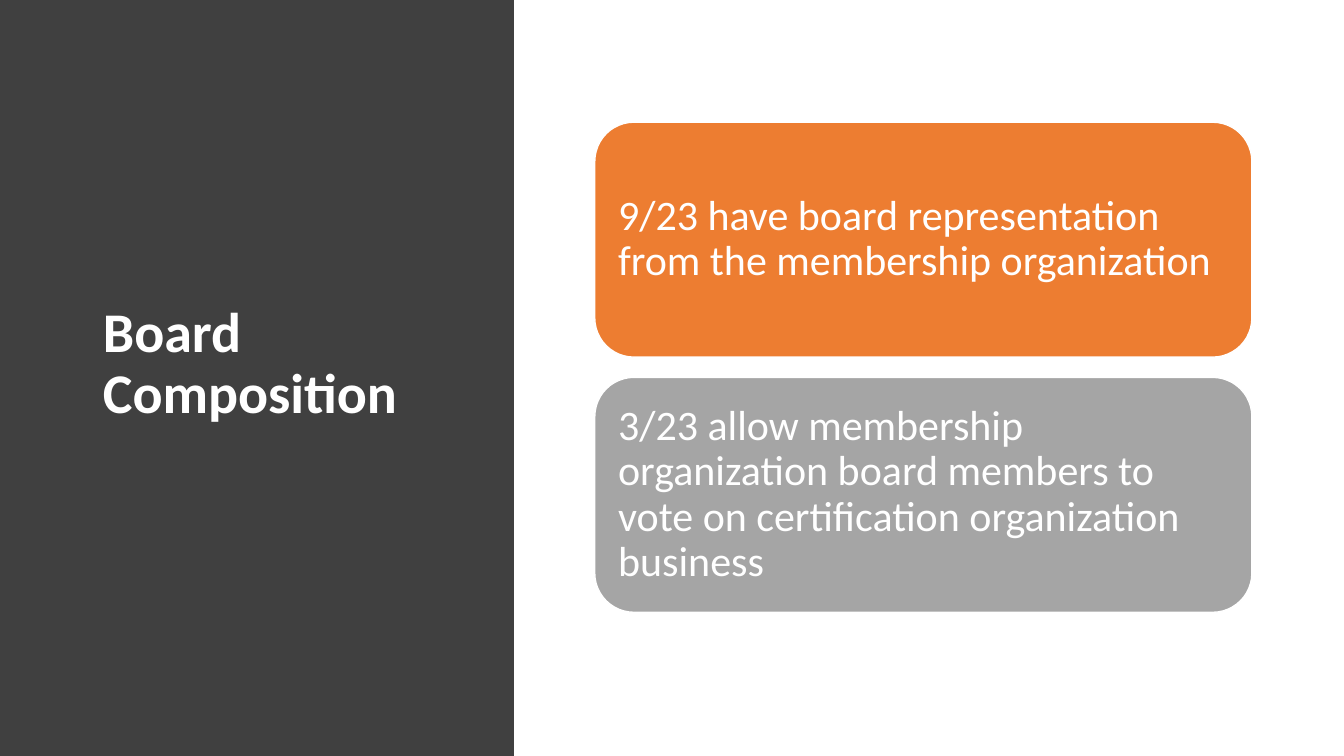
from pptx import Presentation
from pptx.dml.color import RGBColor
from pptx.enum.shapes import MSO_SHAPE
from pptx.enum.text import MSO_ANCHOR, MSO_AUTO_SIZE, PP_ALIGN
from pptx.util import Cm, Pt

COLORS = {
    "panel": "404040",
    "orange": "ED7D31",
    "gray": "A5A5A5",
    "white": "FFFFFF",
}
FONT = "Calibri"
SLIDE_WIDTH, SLIDE_HEIGHT = 33.87, 19.05
CARD_LEFT, CARD_TOP = 14.99, 3.08
CARD_WIDTH, CARD_HEIGHT, CARD_STEP = 16.56, 5.92, 6.43
CARD_INSET = 0.3
CARDS = [
    ("9/23 have board representation from the membership organization", "orange"),
    ("3/23 allow membership organization board members to vote on "
     "certification organization business", "gray"),
]


def color(name):
    return RGBColor.from_string(COLORS[name])


def write_text(shape, text, size, bold=False):
    frame = shape.text_frame
    frame.word_wrap = True
    frame.auto_size = MSO_AUTO_SIZE.NONE
    frame.vertical_anchor = MSO_ANCHOR.MIDDLE
    paragraph = frame.paragraphs[0]
    paragraph.alignment = PP_ALIGN.LEFT
    paragraph.line_spacing = 0.9
    run = paragraph.add_run()
    run.text = text
    run.font.name = FONT
    run.font.size = Pt(size)
    run.font.bold = bold
    run.font.color.rgb = color("white")


def add_filled_shape(slide, kind, left, top, width, height, fill):
    shape = slide.shapes.add_shape(kind, Cm(left), Cm(top), Cm(width), Cm(height))
    shape.shadow.inherit = False
    shape.fill.solid()
    shape.fill.fore_color.rgb = color(fill)
    shape.line.fill.background()
    return shape


def add_title_panel(slide, text):
    panel = add_filled_shape(slide, MSO_SHAPE.RECTANGLE, 0, 0, 12.95, SLIDE_HEIGHT, "panel")
    title = slide.shapes.title
    title.element.addprevious(panel.element)
    title.left, title.top = Cm(2.34), Cm(1.73)
    title.width, title.height = Cm(9.32), Cm(14.92)
    write_text(title, text, 40, bold=True)


def add_card(slide, top, text, fill):
    card = add_filled_shape(slide, MSO_SHAPE.ROUNDED_RECTANGLE,
                            CARD_LEFT, top, CARD_WIDTH, CARD_HEIGHT, fill)
    card.line.color.rgb = color("white")
    card.line.width = Pt(1)
    frame = card.text_frame
    frame.margin_left = frame.margin_right = Cm(CARD_INSET)
    frame.margin_top = frame.margin_bottom = Cm(CARD_INSET)
    write_text(card, text, 30)


def main():
    presentation = Presentation()
    presentation.slide_width = Cm(SLIDE_WIDTH)
    presentation.slide_height = Cm(SLIDE_HEIGHT)
    slide = presentation.slides.add_slide(presentation.slide_layouts[5])
    add_title_panel(slide, "Board Composition")
    for index, (text, fill) in enumerate(CARDS):
        add_card(slide, CARD_TOP + index * CARD_STEP, text, fill)
    presentation.save("out.pptx")


if __name__ == "__main__":
    main()
